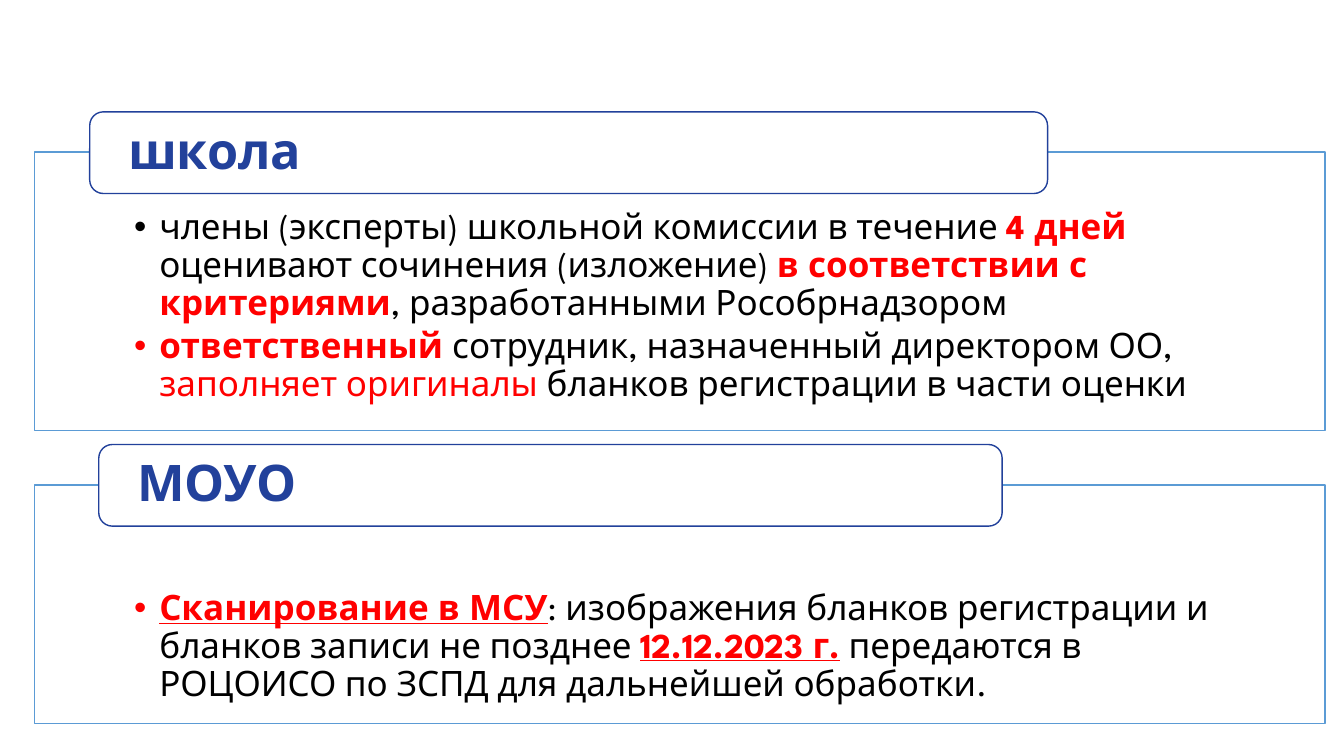
from dataclasses import dataclass

from pptx import Presentation
from pptx.dml.color import RGBColor
from pptx.enum.shapes import MSO_SHAPE
from pptx.enum.text import MSO_ANCHOR, MSO_AUTO_SIZE, PP_ALIGN
from pptx.oxml.ns import qn
from pptx.util import Inches, Pt

ROUNDED = MSO_SHAPE.ROUNDED_RECTANGLE
TOP, MIDDLE = MSO_ANCHOR.TOP, MSO_ANCHOR.MIDDLE
LEFT = PP_ALIGN.LEFT
NO_AUTOFIT = MSO_AUTO_SIZE.NONE
COMPARISON_LAYOUT = 4


@dataclass(frozen=True)
class Theme:
    font: str = "League Spartan"
    white: RGBColor = RGBColor(0xFF, 0xFF, 0xFF)
    black: RGBColor = RGBColor(0, 0, 0)
    red: RGBColor = RGBColor(0xFF, 0, 0)
    navy: RGBColor = RGBColor(0x22, 0x41, 0x9B)
    panel_line: RGBColor = RGBColor(0x5B, 0x9B, 0xD5)
    heading_size: Pt = Pt(36)
    body_size: Pt = Pt(25)


THEME = Theme()

# Span styles: colour, bold, underline
PLAIN = (THEME.black, False, False)
RED = (THEME.red, False, False)
STRONG = (THEME.red, True, False)
LINKED = (THEME.red, True, True)
HEADING = (THEME.navy, True, False)

PANEL_LEFT, PANEL_WIDTH = 0.34, 12.8
HEADING_HEIGHT = 0.81
HEADING_RISE = 0.4  # how far a heading stands above its panel

SCHOOL_BULLETS = [
    [("члены (эксперты) школьной комиссии в течение ", PLAIN),
     ("4 дней ", STRONG),
     ("оценивают сочинения (изложение) ", PLAIN),
     ("в соответствии с критериями", STRONG),
     (", разработанными Рособрнадзором", PLAIN)],
    [("ответственный ", STRONG),
     ("сотрудник, назначенный директором ОО, ", PLAIN),
     ("заполняет оригиналы ", RED),
     ("бланков регистрации в части оценки", PLAIN)],
]
OFFICE_BULLETS = [
    [("Сканирование в МСУ", LINKED),
     (": изображения бланков регистрации и бланков записи не позднее ", PLAIN),
     ("12.12.2023 г.", LINKED),
     (" передаются в РОЦОИСО по ЗСПД для дальнейшей обработки.", PLAIN)],
]


def place(shape, left, top, width, height):
    shape.left, shape.top = Inches(left), Inches(top)
    shape.width, shape.height = Inches(width), Inches(height)


def outline(shape, color):
    shape.fill.solid()
    shape.fill.fore_color.rgb = THEME.white
    shape.line.color.rgb = color
    shape.line.width = Pt(1)


def set_frame(frame, anchor, side, top, bottom):
    frame.word_wrap = True
    frame.auto_size = NO_AUTOFIT
    frame.vertical_anchor = anchor
    frame.margin_left = frame.margin_right = Inches(side)
    frame.margin_top, frame.margin_bottom = Inches(top), Inches(bottom)


def set_bullet(para):
    properties = para._p.get_or_add_pPr()
    properties.set("marL", str(Inches(0.25)))
    properties.set("indent", str(-Inches(0.25)))
    properties.append(properties.makeelement(qn("a:buChar"), {"char": "•"}))


def write_spans(para, spans, size):
    para.alignment = LEFT
    para.line_spacing = 0.9
    para.space_before = Pt(0)
    for text, (color, bold, underline) in spans:
        span = para.add_run()
        span.text = text
        span.font.name = THEME.font
        span.font.size = size
        span.font.color.rgb = color
        span.font.bold = bold
        span.font.underline = underline


def fill_panel(body, top, height, inset_top, bullets):
    place(body, PANEL_LEFT, top, PANEL_WIDTH, height)
    outline(body, THEME.panel_line)
    frame = body.text_frame
    set_frame(frame, TOP, 0.99, inset_top, 0.19)
    for number, spans in enumerate(bullets):
        para = frame.add_paragraph() if number else frame.paragraphs[0]
        set_bullet(para)
        write_spans(para, spans, THEME.body_size)
        para.space_after = Pt(3.75)


def add_heading(page, heading, left, top, width, text):
    area = (left, top, width, HEADING_HEIGHT)
    box = page.shapes.add_shape(ROUNDED, *map(Inches, area))
    box.shadow.inherit = False
    outline(box, THEME.navy)
    # The heading text stands in front of its box
    box.element.addnext(heading.element)
    place(heading, left + 0.04, top + 0.04, width - 0.08, HEADING_HEIGHT - 0.08)
    set_frame(heading.text_frame, MIDDLE, 0.34, 0, 0)
    write_spans(heading.text_frame.paragraphs[0], [(text, HEADING)],
                THEME.heading_size)


def main():
    deck = Presentation()
    deck.slide_width, deck.slide_height = Inches(13.33), Inches(7.5)
    page = deck.slides.add_slide(deck.slide_layouts[COMPARISON_LAYOUT])
    holders = {item.placeholder_format.idx: item for item in page.placeholders}
    title = holders[0].element
    title.getparent().remove(title)

    # Heading, its left and width; panel top, height, top inset; bullets
    sections = [
        ("школа", 0.89, 9.5, 1.51, 2.76, 0.57, SCHOOL_BULLETS),
        ("МОУО", 0.98, 8.96, 4.81, 2.37, 1.05, OFFICE_BULLETS),
    ]
    for number, section in enumerate(sections):
        text, left, width, top, height, inset_top, bullets = section
        heading, body = holders[2 * number + 1], holders[2 * number + 2]
        fill_panel(body, top, height, inset_top, bullets)
        add_heading(page, heading, left, top - HEADING_RISE, width, text)

    deck.save("out.pptx")


if __name__ == "__main__":
    main()
